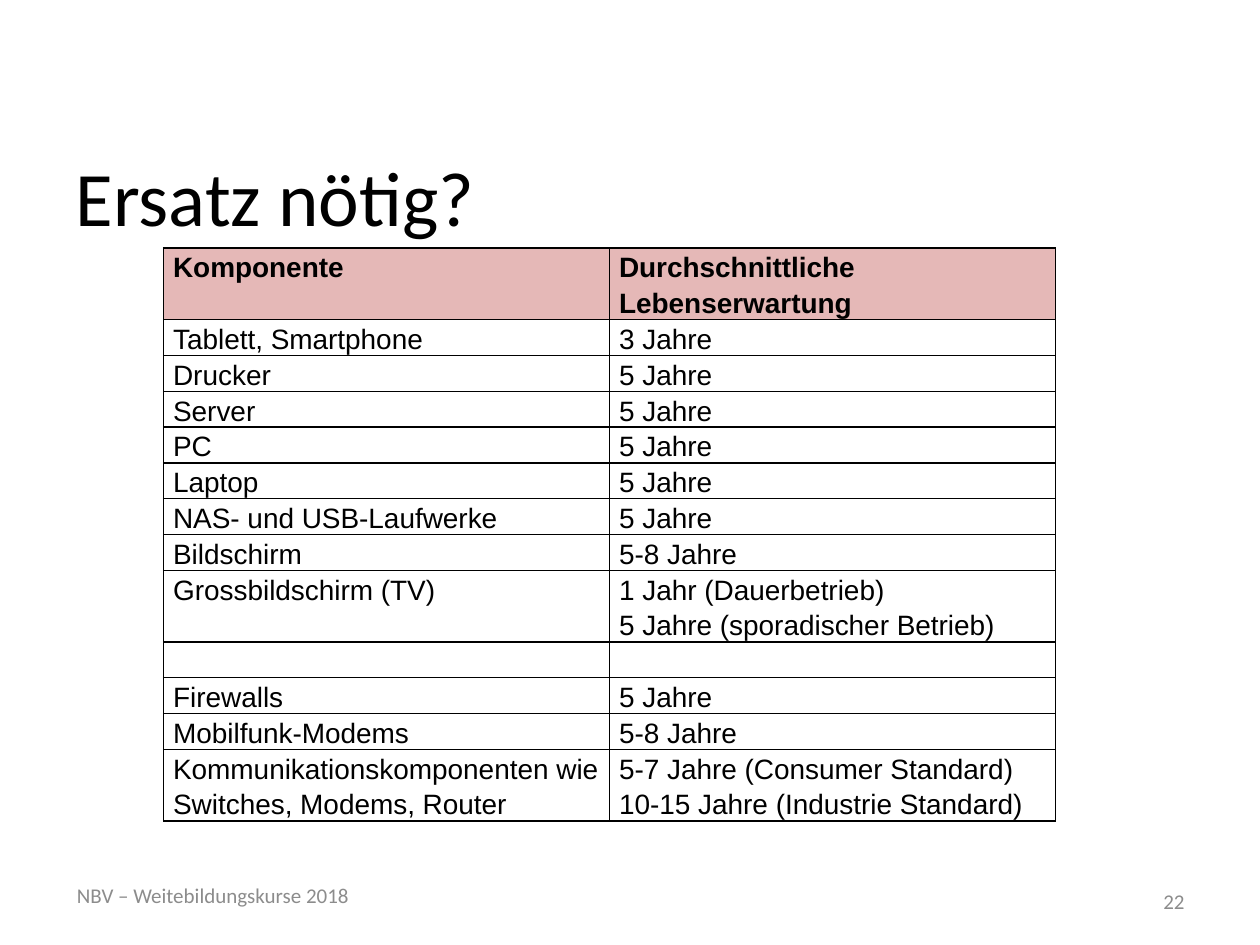
from dataclasses import dataclass

from lxml import etree
from pptx import Presentation
from pptx.dml.color import RGBColor
from pptx.enum.text import MSO_ANCHOR, PP_ALIGN
from pptx.oxml.ns import qn
from pptx.util import Cm, Pt

LEFT, RIGHT = PP_ALIGN.LEFT, PP_ALIGN.RIGHT
MIDDLE = MSO_ANCHOR.MIDDLE
TITLE_ONLY = 5
LINE_HEIGHT = 0.72
LINE_SPACING = 1.15


@dataclass(frozen=True)
class Theme:
    """Colours, fonts and type sizes of the slide."""
    text: str = "000000"
    muted: str = "8C8C8C"
    header: str = "E5B8B7"
    border: str = "000000"
    heading_font: str = "Calibri"
    table_font: str = "Arial"
    title_size: int = 44
    table_size: int = 16
    footer_size: int = 12
    border_width: int = 1


THEME = Theme()

ROWS = [
    ("Komponente", "Durchschnittliche Lebenserwartung", 2),
    ("Tablett, Smartphone", "3 Jahre", 1),
    ("Drucker", "5 Jahre", 1),
    ("Server", "5 Jahre", 1),
    ("PC", "5 Jahre", 1),
    ("Laptop", "5 Jahre", 1),
    ("NAS- und USB-Laufwerke", "5 Jahre", 1),
    ("Bildschirm", "5-8 Jahre", 1),
    ("Grossbildschirm (TV)", "1 Jahr (Dauerbetrieb)\v5 Jahre (sporadischer Betrieb)", 2),
    ("", "", 1),
    ("Firewalls", "5 Jahre", 1),
    ("Mobilfunk-Modems", "5-8 Jahre", 1),
    ("Kommunikationskomponenten wie Switches, Modems, Router",
     "5-7 Jahre (Consumer Standard)\n10-15 Jahre (Industrie Standard)", 2),
]


def add_run(p, text, font, size, color, bold=False):
    """Append one formatted run to a paragraph."""
    r = p.add_run()
    r.text = text
    r.font.name = font
    r.font.size = Pt(size)
    r.font.bold = bold
    r.font.color.rgb = RGBColor.from_string(color)


def place(sp, box):
    """Move a shape to a box given in centimetres."""
    sp.left, sp.top, sp.width, sp.height = (Cm(v) for v in box)


def add_title(s, box, text):
    """Place and format the title placeholder."""
    sp = s.shapes.title
    place(sp, box)
    tf = sp.text_frame
    tf.word_wrap = True
    tf.vertical_anchor = MIDDLE
    p = tf.paragraphs[0]
    p.alignment = LEFT
    add_run(p, text, THEME.heading_font, THEME.title_size, THEME.text)


def add_footer(s, box, text, align):
    """Add one muted footer text."""
    sp = s.shapes.add_textbox(*(Cm(v) for v in box))
    tf = sp.text_frame
    tf.word_wrap = True
    tf.vertical_anchor = MIDDLE
    p = tf.paragraphs[0]
    p.alignment = align
    add_run(p, text, THEME.heading_font, THEME.footer_size, THEME.muted)


def set_borders(cell):
    """Draw a thin line on all four sides of a cell."""
    tc_pr = cell._tc.get_or_add_tcPr()
    for side in ("lnL", "lnR", "lnT", "lnB"):
        ln = etree.SubElement(tc_pr, qn(f"a:{side}"), w=str(Pt(THEME.border_width)))
        fill = etree.SubElement(ln, qn("a:solidFill"))
        etree.SubElement(fill, qn("a:srgbClr"), val=THEME.border)


def fill_cell(cell, text, is_header):
    """Write and format one table cell."""
    cell.margin_left = cell.margin_right = Cm(0.19)
    cell.margin_top = cell.margin_bottom = 0
    set_borders(cell)
    if is_header:
        cell.fill.solid()
        cell.fill.fore_color.rgb = RGBColor.from_string(THEME.header)
    else:
        cell.fill.background()
    tf = cell.text_frame
    for i, line in enumerate(text.split("\n")):
        p = tf.add_paragraph() if i else tf.paragraphs[0]
        p.line_spacing = LINE_SPACING
        for j, part in enumerate(line.split("\v")):
            if j:
                p.add_line_break()
            if part:
                add_run(p, part, THEME.table_font, THEME.table_size, THEME.text, is_header)
        etree.SubElement(p._p, qn("a:endParaRPr"), sz=str(THEME.table_size * 100))


def add_lifetime_table(s, box, rows):
    """Add the table of components and their life expectancy."""
    left, top, width = box
    height = LINE_HEIGHT * sum(lines for *_, lines in rows)
    table = s.shapes.add_table(len(rows), 2, Cm(left), Cm(top), Cm(width), Cm(height)).table
    table.first_row = True
    table.horz_banding = False
    for i, (*texts, lines) in enumerate(rows):
        table.rows[i].height = Cm(LINE_HEIGHT * lines)
        for j, text in enumerate(texts):
            fill_cell(table.cell(i, j), text, i == 0)


def main():
    """Build and save the slide."""
    prs = Presentation()
    prs.slide_width, prs.slide_height = Cm(25.4), Cm(19.05)
    s = prs.slides.add_slide(prs.slide_layouts[TITLE_ONLY])
    add_title(s, (1.27, 2.34, 22.86, 3.2), "Ersatz nötig?")
    add_lifetime_table(s, (3.3, 5, 17.98), ROWS)
    add_footer(s, (18.21, 17.65, 5.92, 1.02), "22", RIGHT)
    add_footer(s, (1.3, 17.53, 7.19, 1.02), "NBV – Weitebildungskurse 2018", LEFT)
    prs.save("out.pptx")


if __name__ == "__main__":
    main()
